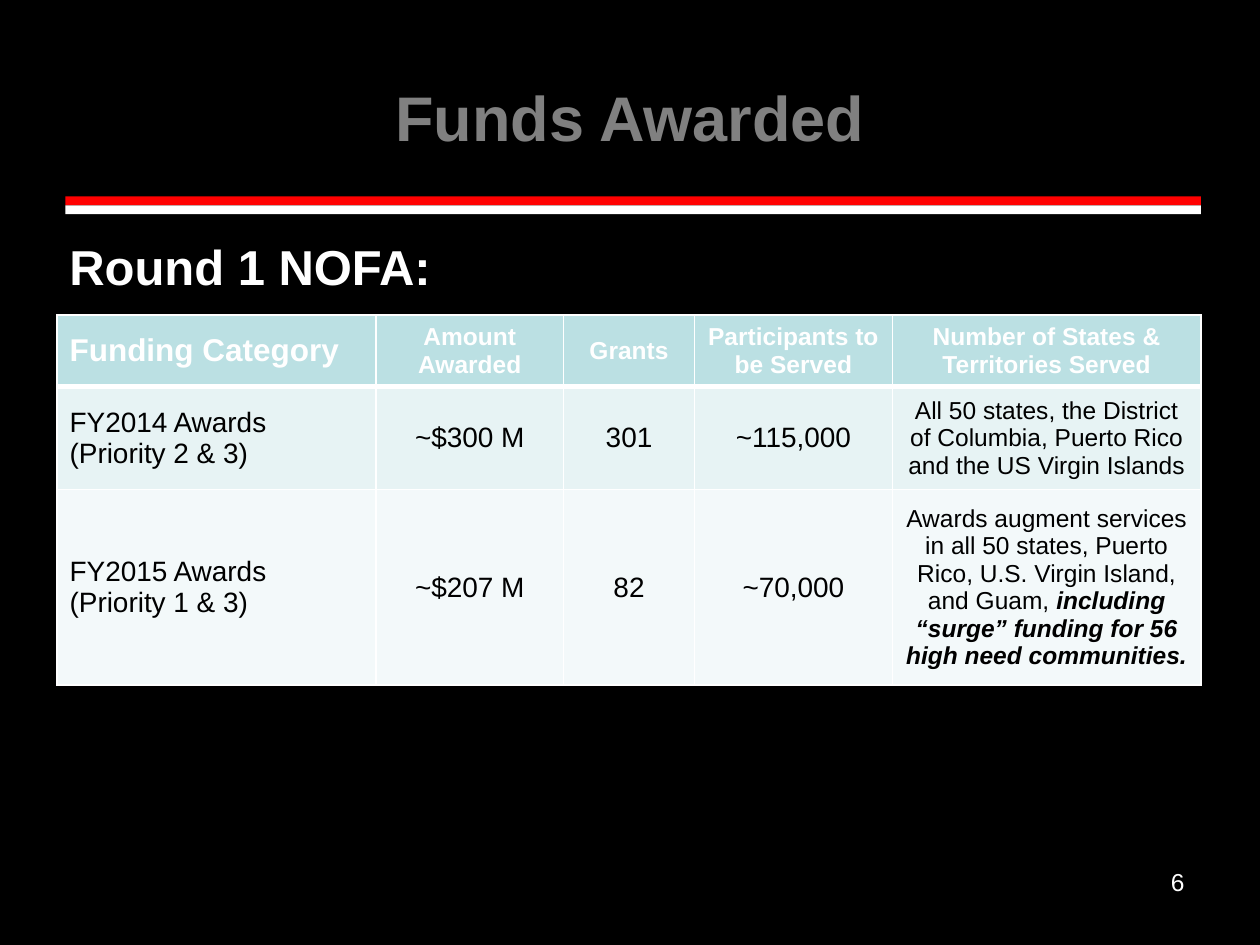
from lxml import etree
from pptx import Presentation
from pptx.dml.color import RGBColor
from pptx.enum.shapes import MSO_SHAPE
from pptx.enum.text import MSO_ANCHOR, PP_ALIGN
from pptx.oxml.ns import qn
from pptx.util import Cm, Pt

RECT = MSO_SHAPE.RECTANGLE
TOP, MIDDLE = MSO_ANCHOR.TOP, MSO_ANCHOR.MIDDLE
LEFT, CENTER, RIGHT = PP_ALIGN.LEFT, PP_ALIGN.CENTER, PP_ALIGN.RIGHT

FONT = "Arial"
BLACK, WHITE, RED, GRAY = "000000", "FFFFFF", "FF0000", "808080"
FILLS = ["BBE0E3", "E7F3F4", "F3F9FA"]
COLS = [6.43, 3.78, 2.64, 3.99, 6.22]
ROWS = [1.35, 2.08, 3.94]
HEADS = ["Funding Category", "Amount Awarded", "Grants",
         "Participants to be Served", "Number of States & Territories Served"]
AWARDS = [
    ["FY2014 Awards\n(Priority 2 & 3)", "~$300 M", "301", "~115,000",
     "All 50 states, the District of Columbia, Puerto Rico "
     "and the US Virgin Islands"],
    ["FY2015 Awards\n(Priority 1 & 3)", "~$207 M", "82", "~70,000",
     "Awards augment services in all 50 states, Puerto Rico, "
     "U.S. Virgin Island, and Guam, "],
]
SURGE = "including “surge” funding for 56 high need communities."


def paint(fill, color):
    fill.solid()
    fill.fore_color.rgb = RGBColor.from_string(color)


def add_run(para, text, size, color, bold=False, italic=False):
    """Add text to a paragraph, with a line break at each newline."""
    for i, line in enumerate(text.split("\n")):
        if i:
            para.add_line_break()
        run = para.add_run()
        run.text = line
        font = run.font
        font.name, font.size = FONT, Pt(size)
        font.bold, font.italic = bold, italic
        font.color.rgb = RGBColor.from_string(color)


def add_label(slide, box, text, size, color, align=LEFT, anchor=TOP, bold=True):
    frame = slide.shapes.add_textbox(*map(Cm, box)).text_frame
    frame.word_wrap = True
    frame.vertical_anchor = anchor
    para = frame.paragraphs[0]
    para.alignment = align
    add_run(para, text, size, color, bold)


def add_rule(slide, box):
    """Draw the red and white bands that share the box's height."""
    left, top, width, height = box
    half = height / 2
    for i, color in enumerate([RED, WHITE]):
        band = slide.shapes.add_shape(
            RECT, Cm(left), Cm(top + i * half), Cm(width), Cm(half))
        band.shadow.inherit = False
        paint(band.fill, color)
        band.line.fill.background()


def add_edges(cell, top, bottom):
    props = cell._tc.get_or_add_tcPr()
    for side, width in zip("LRTB", [1, 1, top, bottom]):
        line = etree.SubElement(props, qn(f"a:ln{side}"), w=str(Pt(width)))
        fill = etree.SubElement(line, qn("a:solidFill"))
        etree.SubElement(fill, qn("a:srgbClr"), val=WHITE)


def add_awards(slide, box):
    rows = [HEADS] + AWARDS
    table = slide.shapes.add_table(
        len(rows), len(COLS), *map(Cm, box)).table
    for col, width in zip(table.columns, COLS):
        col.width = Cm(width)
    for r, texts in enumerate(rows):
        table.rows[r].height = Cm(ROWS[r])
        head = r == 0
        color = WHITE if head else BLACK
        sizes = [18, 14, 14, 14, 14] if head else [16, 16, 16, 16, 14]
        for c, (text, size) in enumerate(zip(texts, sizes)):
            cell = table.cell(r, c)
            add_edges(cell, 3 if r == 1 else 1, 3 if head else 1)
            paint(cell.fill, FILLS[r])
            cell.vertical_anchor = MIDDLE
            para = cell.text_frame.paragraphs[0]
            para.alignment = CENTER if c else LEFT
            add_run(para, text, size, color, head)
    add_run(para, SURGE, 14, BLACK, True, True)


def main():
    deck = Presentation()
    deck.slide_width, deck.slide_height = Cm(25.4), Cm(19.05)
    slide = deck.slides.add_slide(deck.slide_layouts[6])
    paint(slide.background.fill, BLACK)
    add_rule(slide, (1.32, 3.96, 22.89, 0.36))
    add_label(slide, (1.27, 0.76, 22.86, 3.18), "Funds Awarded", 36, GRAY,
              CENTER, MIDDLE)
    add_awards(slide, (1.15, 6.35, sum(COLS), sum(ROWS)))
    add_label(slide, (18.21, 17.35, 5.92, 1.32), "6", 14, WHITE, RIGHT,
              bold=False)
    add_label(slide, (1.15, 4.65, 22.66, 1.45), "Round 1 NOFA:", 28, WHITE)
    deck.save("out.pptx")


if __name__ == "__main__":
    main()
